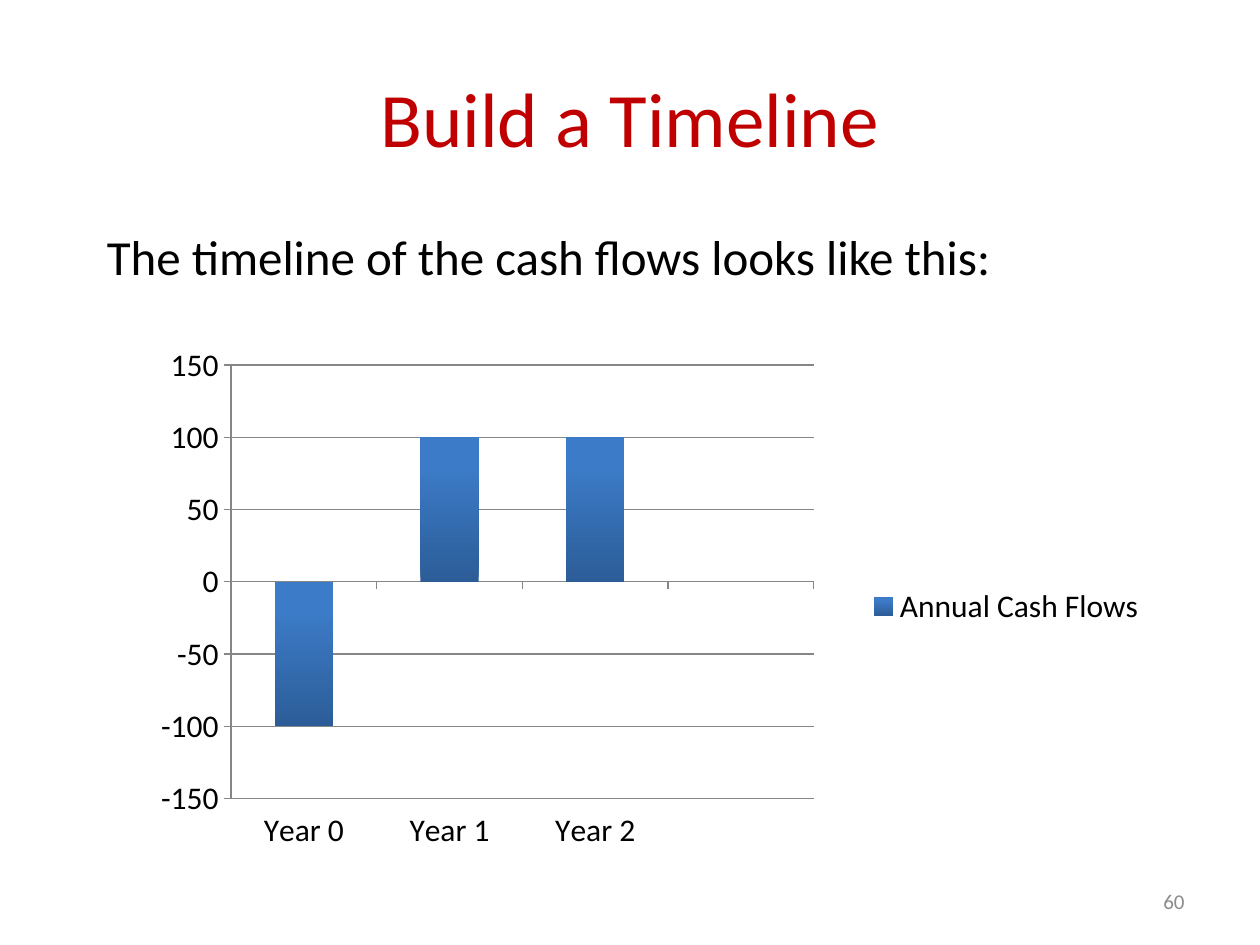
from dataclasses import dataclass

from lxml import etree
from pptx import Presentation
from pptx.chart.data import CategoryChartData
from pptx.dml.color import RGBColor
from pptx.enum.chart import XL_CHART_TYPE, XL_LEGEND_POSITION, XL_TICK_LABEL_POSITION, XL_TICK_MARK
from pptx.enum.text import MSO_ANCHOR, PP_ALIGN
from pptx.oxml.ns import qn
from pptx.util import Inches, Pt

COLUMN = XL_CHART_TYPE.COLUMN_CLUSTERED
RIGHT_KEY = XL_LEGEND_POSITION.RIGHT
LOW = XL_TICK_LABEL_POSITION.LOW
OUTSIDE = XL_TICK_MARK.OUTSIDE
MIDDLE, TOP = MSO_ANCHOR.MIDDLE, MSO_ANCHOR.TOP
LEFT, CENTER, RIGHT = PP_ALIGN.LEFT, PP_ALIGN.CENTER, PP_ALIGN.RIGHT
WIDE, HIGH = Inches(10), Inches(7.5)


@dataclass(frozen=True)
class Theme:
    font: str = "Calibri"
    red: str = "C00000"
    ink: str = "000000"
    gray: str = "8C8C8C"
    line: str = "868686"
    dark: str = "2C5D98"
    light: str = "3C7BC7"
    title: int = 44
    body: int = 28
    chart: int = 18
    note: int = 12


THEME = Theme()


def assign(item, values):
    for name, value in values.items():
        setattr(item, name, value)


def share(left, top, width, height):
    return [round(part * side) for part, side in
            zip((left, top, width, height), (WIDE, HIGH, WIDE, HIGH))]


def style(font, size, color):
    assign(font, {"name": THEME.font, "size": Pt(size)})
    font.color.rgb = RGBColor.from_string(color)


def write(shape, text, size, color, align, anchor):
    frame = shape.text_frame
    assign(frame, {"text": text, "word_wrap": True, "vertical_anchor": anchor})
    line = frame.paragraphs[0]
    line.alignment = align
    style(line.runs[0].font, size, color)


def add_title(slide, box, text):
    title = slide.shapes.title
    assign(title, dict(zip(("left", "top", "width", "height"), box)))
    write(title, text, THEME.title, THEME.red, CENTER, MIDDLE)


def add_text(slide, box, *words):
    write(slide.shapes.add_textbox(*box), *words)


def place_plot(chart, **sides):
    area = chart._chartSpace.find(".//" + qn("c:plotArea"))
    for old in area.findall(qn("c:layout")):
        area.remove(old)
    layout = etree.Element(qn("c:layout"))
    area.insert(0, layout)
    manual = etree.SubElement(layout, qn("c:manualLayout"))
    values = {"layoutTarget": "inner", "xMode": "edge", "yMode": "edge", **sides}
    for name, value in values.items():
        etree.SubElement(manual, qn(f"c:{name}")).set("val", str(value))


def shade(fill):
    fill.gradient()
    fill.gradient_angle = 90
    stops = zip(fill.gradient_stops, (0, 0.8), (THEME.dark, THEME.light))
    for stop, place, color in stops:
        stop.position = place
        stop.color.rgb = RGBColor.from_string(color)


def rule(line):
    line.color.rgb = RGBColor.from_string(THEME.line)
    line.width = Pt(0.75)


def add_columns(slide, box, cats, name, values):
    data = CategoryChartData()
    data.categories = cats
    data.add_series(name, values)
    chart = slide.shapes.add_chart(COLUMN, *box, data).chart
    assign(chart, {"has_title": False, "has_legend": True})
    assign(chart.legend, {"position": RIGHT_KEY, "include_in_layout": False})
    style(chart.font, THEME.chart, THEME.ink)
    assign(chart.plots[0], {"vary_by_categories": False, "gap_width": 150})
    series = chart.plots[0].series[0]
    series.invert_if_negative = False
    shade(series.format.fill)
    for axis in (chart.category_axis, chart.value_axis):
        axis.major_tick_mark = OUTSIDE
        rule(axis.format.line)
    chart.category_axis.tick_label_position = LOW
    assign(chart.value_axis, {"minimum_scale": -150, "maximum_scale": 150,
                              "major_unit": 50, "has_major_gridlines": True})
    rule(chart.value_axis.major_gridlines.format.line)
    place_plot(chart, x=0.086, y=0.045, w=0.574, h=0.818)


def main():
    deck = Presentation()
    assign(deck, {"slide_width": WIDE, "slide_height": HIGH})
    slide = deck.slides.add_slide(deck.slide_layouts[5])
    add_title(slide, share(0.05, 0.04, 0.9, 1 / 6), "Build a Timeline")
    add_columns(slide, share(0.114, 0.361, 0.806, 0.561),
                ["Year 0", "Year 1", "Year 2", ""],
                "Annual Cash Flows", [-100, 100, 100, None])
    add_text(slide, share(0.075, 0.233, 0.883, 0.076),
             "The timeline of the cash flows looks like this:",
             THEME.body, THEME.ink, LEFT, TOP)
    add_text(slide, share(0.717, 0.927, 0.233, 0.053),
             "60", THEME.note, THEME.gray, RIGHT, MIDDLE)
    deck.save("out.pptx")


if __name__ == "__main__":
    main()
